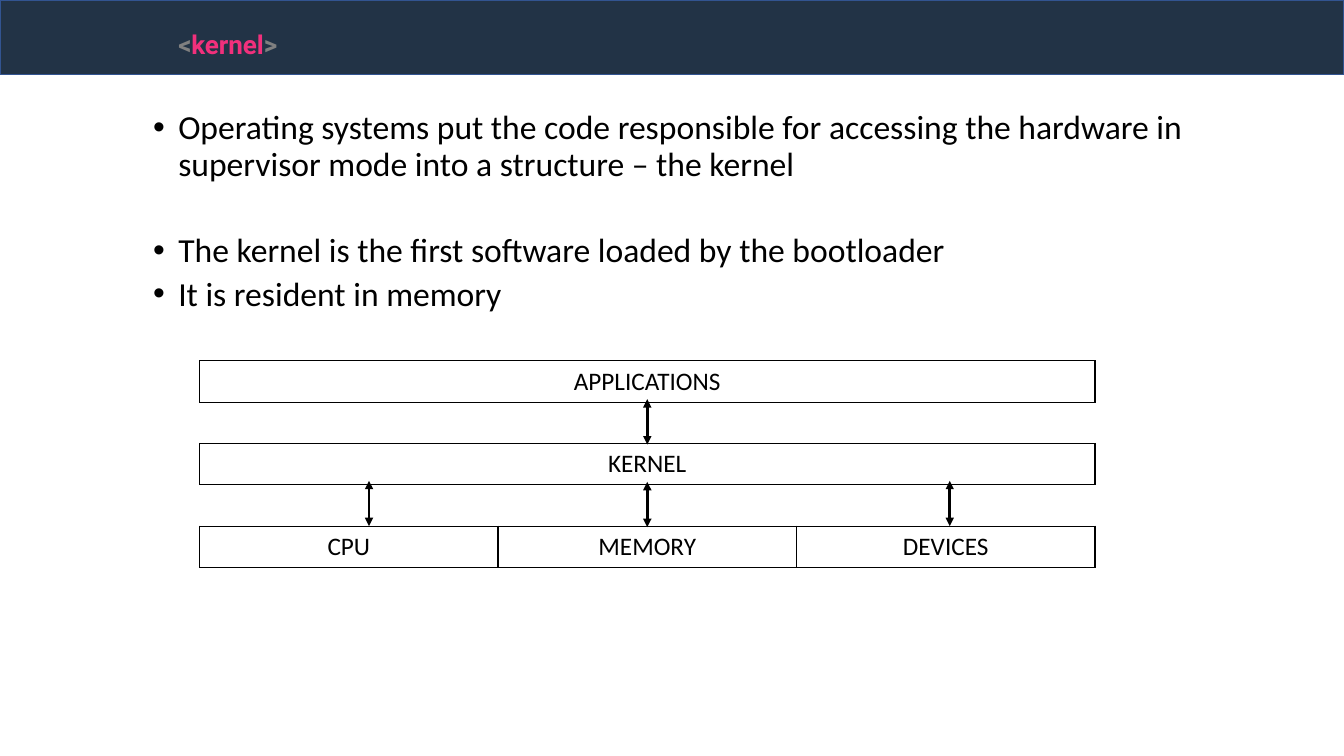
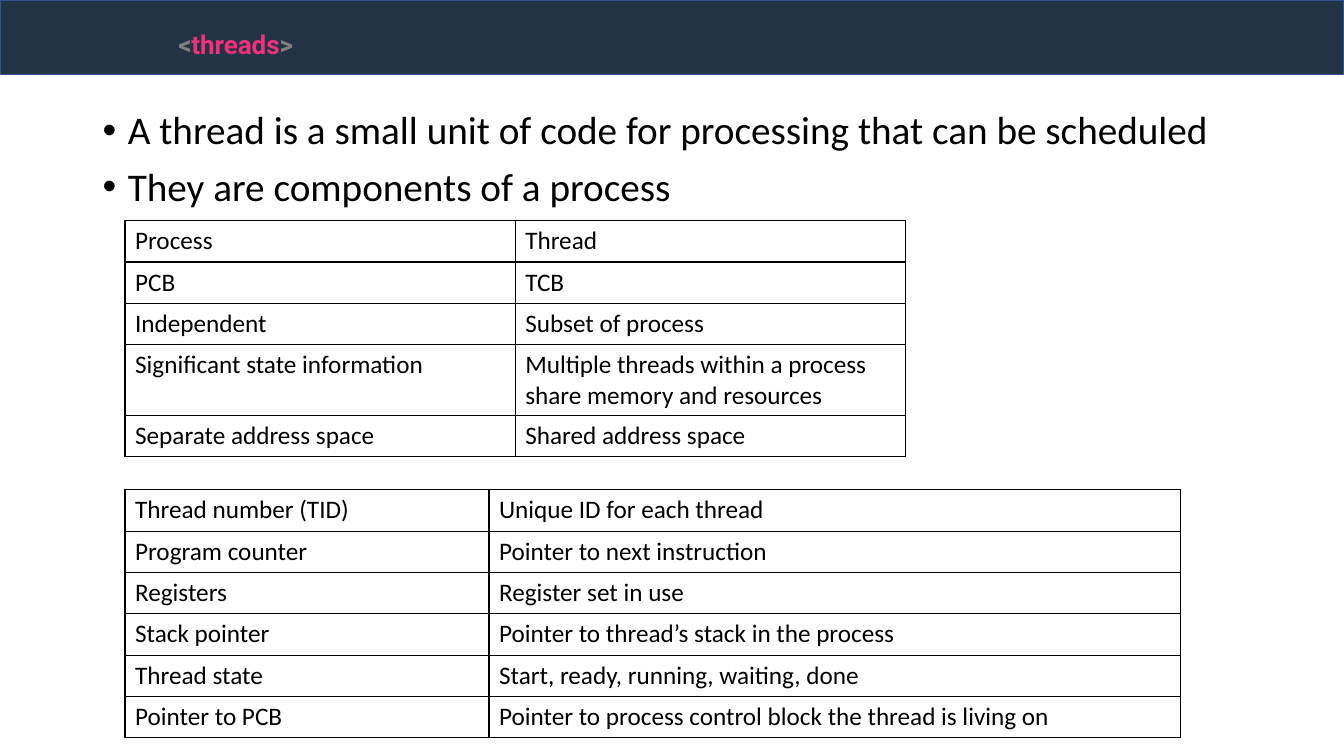
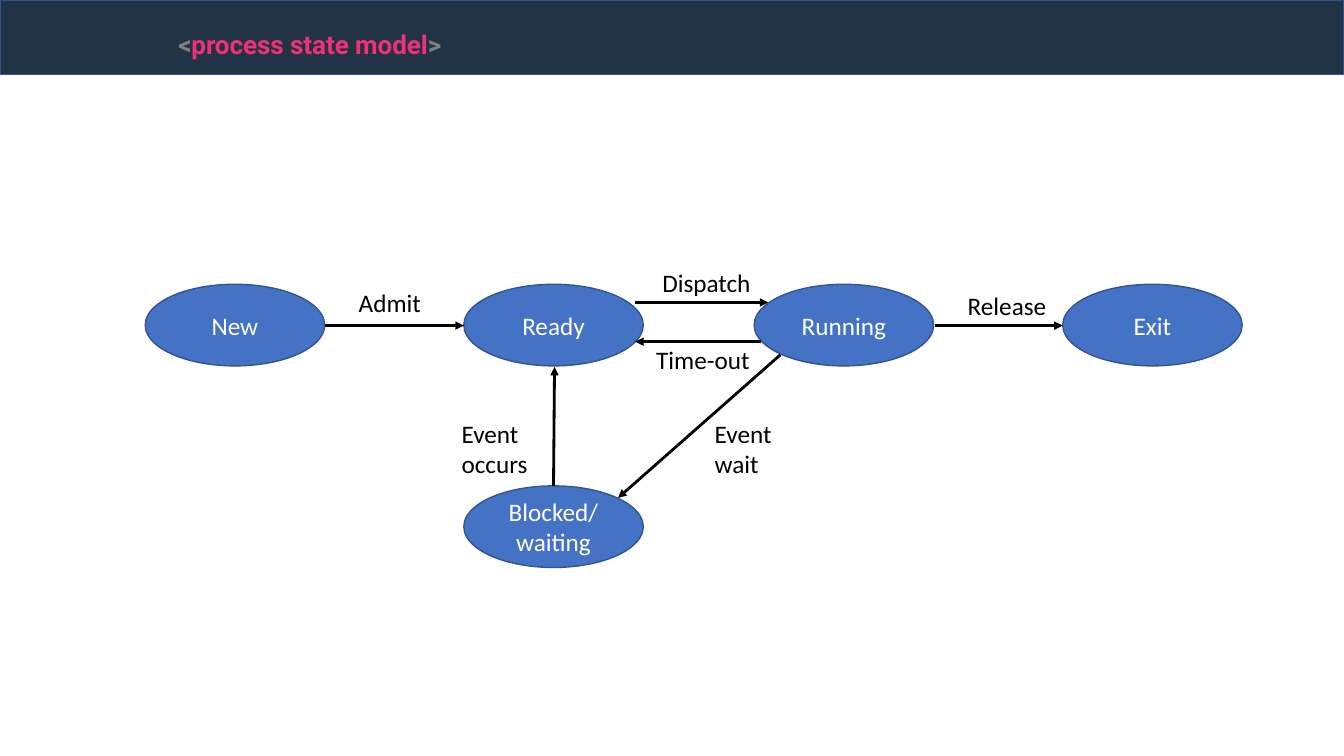
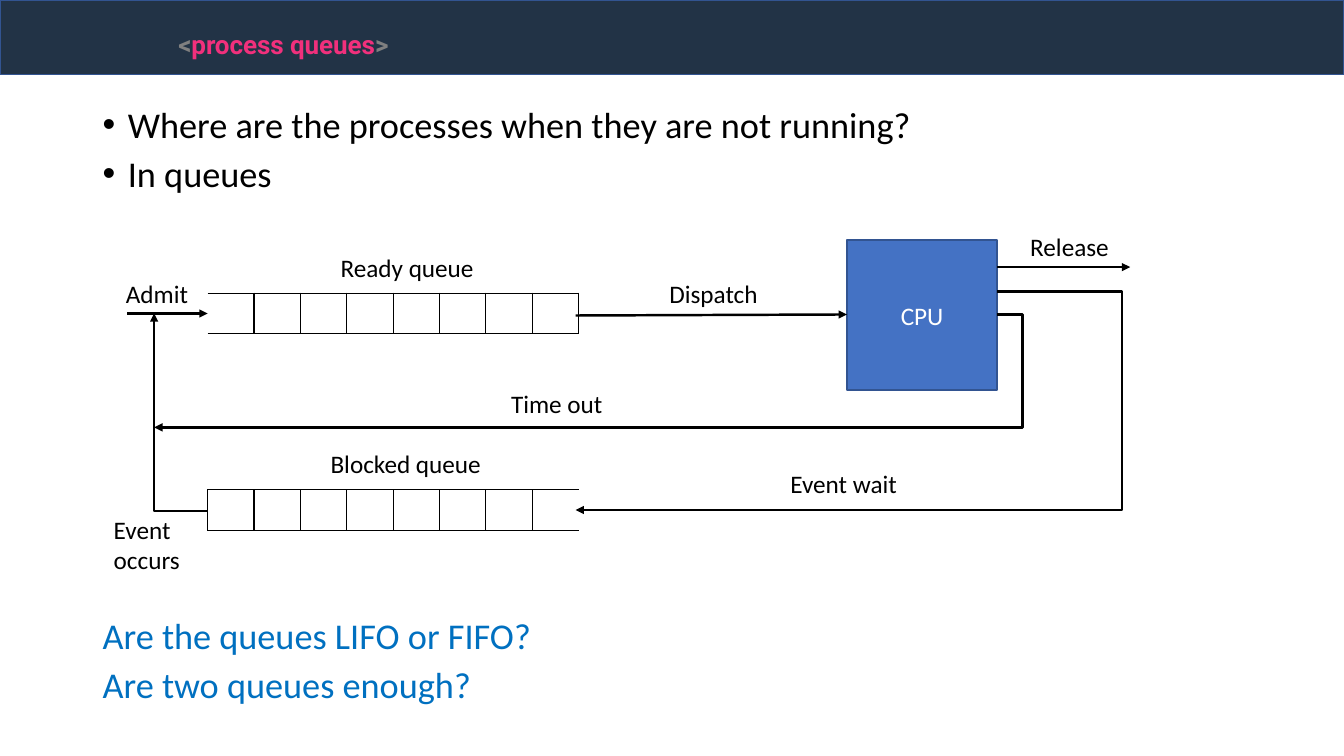
from pptx import Presentation
from pptx.dml.color import RGBColor
from pptx.enum.shapes import MSO_CONNECTOR, MSO_SHAPE
from pptx.enum.text import MSO_ANCHOR, PP_ALIGN
from pptx.oxml.ns import qn
from pptx.util import Inches, Pt
from lxml import etree

LINE, ELBOW = MSO_CONNECTOR.STRAIGHT, MSO_CONNECTOR.ELBOW
RECT, OVAL = MSO_SHAPE.RECTANGLE, MSO_SHAPE.OVAL
LEFT, MID = PP_ALIGN.LEFT, PP_ALIGN.CENTER
TOP, CORE = MSO_ANCHOR.TOP, MSO_ANCHOR.MIDDLE

COLORS = {
    "band": "223346", "edge": "325491", "gray": "808080", "pink": "F1307C",
    "blue": "4472C4", "ask": "0070C0", "black": "000000", "white": "FFFFFF",
}
PLAIN = {"name": "Calibri", "size": Pt(18)}
TITLE = {"name": "Roboto", "size": Pt(32), "bold": True}
ROW = 0.41


def color(name):
    return RGBColor.from_string(COLORS[name])


def add(node, tag, **attrs):
    return etree.SubElement(node, qn(tag), attrs)


class Deck:
    def __init__(self):
        self.prs = Presentation()
        self.prs.slide_width = Inches(13.33)
        self.prs.slide_height = Inches(7.5)
        self.slide = None

    def start(self, title):
        self.slide = self.prs.slides.add_slide(self.prs.slide_layouts[6])
        self.shape(RECT, 0, 0, 13.33, 0.74, fill="band")
        frame = self.frame(1.67, 0.18, 3, 0.64, wrap=False)
        for text, hue in (("<", "gray"), (title, "pink"), (">", "gray")):
            run = self.run(frame.paragraphs[0], text, hue, TITLE)
            run.font._element.set("baseline", "30000")

    def run(self, para, text, hue="black", style=PLAIN):
        run = para.add_run()
        run.text = text
        for key, value in style.items():
            setattr(run.font, key, value)
        run.font.color.rgb = color(hue)
        return run

    def frame(self, x, y, w, h, wrap=True):
        box = self.slide.shapes.add_textbox(Inches(x), Inches(y), Inches(w), Inches(h))
        box.text_frame.word_wrap = wrap
        return box.text_frame

    def fill(self, frame, lines, hue="black", align=LEFT, anchor=TOP):
        frame.vertical_anchor = anchor
        for i, text in enumerate(lines):
            para = frame.add_paragraph() if i else frame.paragraphs[0]
            para.alignment = align
            self.run(para, text, hue)

    def label(self, text, x, y, w, h=0.4):
        self.fill(self.frame(x, y, w, h), [text])

    def body(self, y, h, size, lines, gaps, pitch=0.9, inset=0.25, hue="black", mark=True):
        frame = self.frame(0.92, y, 11.5, h)
        style = {"name": "Calibri", "size": Pt(size)}
        for i, text in enumerate(lines):
            para = frame.add_paragraph() if i else frame.paragraphs[0]
            if mark:
                props = para._p.get_or_add_pPr()
                props.set("marL", str(Inches(inset)))
                props.set("indent", str(-Inches(0.25)))
                add(props, "a:buFont", typeface="Arial")
                add(props, "a:buChar", char="•")
            para.line_spacing = pitch
            if i:
                para.space_before = Pt(gaps[i - 1])
            self.run(para, text, hue, style)

    def shape(self, kind, x, y, w, h, lines=(), fill="blue"):
        shape = self.slide.shapes.add_shape(kind, Inches(x), Inches(y), Inches(w), Inches(h))
        shape.shadow.inherit = False
        shape.fill.solid()
        shape.fill.fore_color.rgb = color(fill)
        shape.line.color.rgb = color("edge")
        shape.line.width = Pt(1)
        self.fill(shape.text_frame, lines, "white", MID, CORE)

    def arrow(self, x1, y1, x2, y2, width=2, both=False, kind=LINE):
        link = self.slide.shapes.add_connector(kind, Inches(x1), Inches(y1), Inches(x2), Inches(y2))
        link.line.color.rgb = color("black")
        link.line.width = Pt(width)
        stroke = link.line._get_or_add_ln()
        for tag in ("a:headEnd", "a:tailEnd") if both else ("a:tailEnd",):
            add(stroke, tag, type="triangle")
        add(link._element.spPr, "a:effectLst")
        return link

    def bend(self, x1, y1, x2, y2, turn):
        link = self.arrow(x1, y1, x2, y2, 1.75, kind=ELBOW)
        geom = link._element.spPr.find(qn("a:prstGeom"))
        guides = geom.find(qn("a:avLst"))
        if guides is None:
            guides = add(geom, "a:avLst")
        ratio = round((turn - x1) / (x2 - x1) * 100000)
        add(guides, "a:gd", name="adj1", fmla=f"val {ratio}")

    def border(self, cell, sides):
        props = cell._tc.get_or_add_tcPr()
        for side in "LRTB":
            if side in sides:
                edge = add(props, f"a:ln{side}", w=str(Pt(1)))
                add(add(edge, "a:solidFill"), "a:srgbClr", val=COLORS["black"])
            else:
                add(add(props, f"a:ln{side}", w="0"), "a:noFill")
        cell.fill.background()

    def table(self, x, y, widths, rows, high=ROW, tall=None, sides=None, align=LEFT, anchor=TOP):
        highs = [(tall or {}).get(i, high) for i in range(len(rows))]
        table = self.slide.shapes.add_table(
            len(rows), len(widths), Inches(x), Inches(y),
            Inches(sum(widths)), Inches(sum(highs))).table
        table.first_row = table.horz_banding = False
        for col, width in zip(table.columns, widths):
            col.width = Inches(width)
        for r, texts in enumerate(rows):
            table.rows[r].height = Inches(highs[r])
            for c in range(len(widths)):
                cell = table.cell(r, c)
                self.border(cell, (sides or {}).get((r, c), "LRTB"))
                if c < len(texts):
                    cell.vertical_anchor = anchor
                    self.fill(cell.text_frame, [texts[c]], align=align, anchor=anchor)
        return table

    def queue(self, y, gap, side):
        self.table(2.06, y, [0.46] * 8, [[]], 0.4, sides={(0, gap): side})


def kernel(deck):
    deck.start("kernel")
    deck.body(1.05, 2.2, 24, [
        "Operating systems put the code responsible for accessing the hardware in "
        "supervisor mode into a structure – the kernel",
        "The kernel is the first software loaded by the bootloader",
        "It is resident in memory",
    ], [36, 5], inset=0.75)
    rows = [["APPLICATIONS"], [], ["KERNEL"], [], ["CPU", "MEMORY", "DEVICES"]]
    blank = {(r, c): "TB" for r in (1, 3) for c in range(3)}
    table = deck.table(1.98, 3.58, [2.96] * 3, rows, sides=blank, align=MID, anchor=CORE)
    for r in (0, 2):
        table.cell(r, 0).merge(table.cell(r, 2))
    for x, y in ((6.42, 3.96), (3.66, 4.77), (6.42, 4.78), (9.42, 4.77)):
        deck.arrow(x, y, x, y + 0.45, both=True)


def threads(deck):
    deck.start("threads")
    deck.body(1.05, 1.1, 28, [
        "A thread is a small unit of code for processing that can be scheduled",
        "They are components of a process",
    ], [10])
    deck.table(1.24, 2.19, [3.87] * 2, [
        ("Process", "Thread"),
        ("PCB", "TCB"),
        ("Independent", "Subset of process"),
        ("Significant state information",
         "Multiple threads within a process share memory and resources"),
        ("Separate address space", "Shared address space"),
    ], tall={3: 0.7})
    deck.table(1.24, 4.86, [3.61, 6.86], [
        ("Thread number (TID)", "Unique ID for each thread"),
        ("Program counter", "Pointer to next instruction"),
        ("Registers", "Register set in use"),
        ("Stack pointer", "Pointer to thread’s stack in the process"),
        ("Thread state", "Start, ready, running, waiting, done"),
        ("Pointer to PCB", "Pointer to process control block the thread is living on"),
    ])


def states(deck):
    deck.start("process state model")
    for x, y, *lines in (
        (1.44, 2.82, "New"), (4.6, 2.82, "Ready"), (7.48, 2.82, "Running"),
        (10.54, 2.82, "Exit"), (4.6, 4.82, "Blocked/", "waiting"),
    ):
        deck.shape(OVAL, x, y, 1.78, 0.81, lines)
    for ends in (
        (3.22, 3.23, 4.6, 3.23), (6.3, 3, 7.62, 3), (7.55, 3.39, 6.3, 3.39),
        (9.27, 3.23, 10.54, 3.23), (7.74, 3.52, 6.13, 4.94), (5.49, 4.82, 5.5, 3.64),
    ):
        deck.arrow(*ends)
    for item in (
        ("Admit", 3.46, 2.8, 1.04), ("Time-out", 6.41, 3.37, 1.14),
        ("Event occurs", 4.48, 4.1, 1.04, 0.71), ("Dispatch", 6.47, 2.6, 1.08),
        ("Event wait", 6.99, 4.1, 1.04, 0.71), ("Release", 9.5, 2.83, 1.04),
    ):
        deck.label(*item)


def queues(deck):
    deck.start("process queues")
    deck.body(1.05, 1, 25.9, [
        "Where are the processes when they are not running?", "In queues",
    ], [10], 0.8)
    deck.body(6.12, 1, 25.9, [
        "Are the queues LIFO or FIFO?", "Are two queues enough?",
    ], [10], 0.8, hue="ask", mark=False)
    deck.queue(2.91, 0, "RTB")
    deck.queue(4.86, 7, "LTB")
    deck.shape(RECT, 8.4, 2.38, 1.49, 1.49, ["CPU"])
    for ends in (
        (1.26, 3.11, 2.06, 3.11), (5.71, 3.13, 8.4, 3.12), (9.89, 2.65, 11.21, 2.65),
    ):
        deck.arrow(*ends, 1.75)
    for ends in (
        (9.89, 3.12, 1.53, 4.24, 10.14), (9.89, 2.89, 5.71, 5.06, 11.13),
        (2.06, 5.07, 1.53, 3.11, 1.53),
    ):
        deck.bend(*ends)
    for item in (
        ("Admit", 1.15, 2.71, 1.03), ("Event occurs", 1.03, 5.05, 1.03, 0.71),
        ("Event wait", 7.74, 4.6, 1.34), ("Dispatch", 6.54, 2.71, 1.19),
        ("Time out", 4.97, 3.8, 1.32), ("Blocked queue", 3.18, 4.4, 1.79),
        ("Ready queue", 3.28, 2.45, 1.75), ("Release", 10.12, 2.25, 1.03),
    ):
        deck.label(*item)


def main():
    deck = Deck()
    for build in (kernel, threads, states, queues):
        build(deck)
    deck.prs.save("out.pptx")


if __name__ == "__main__":
    main()
